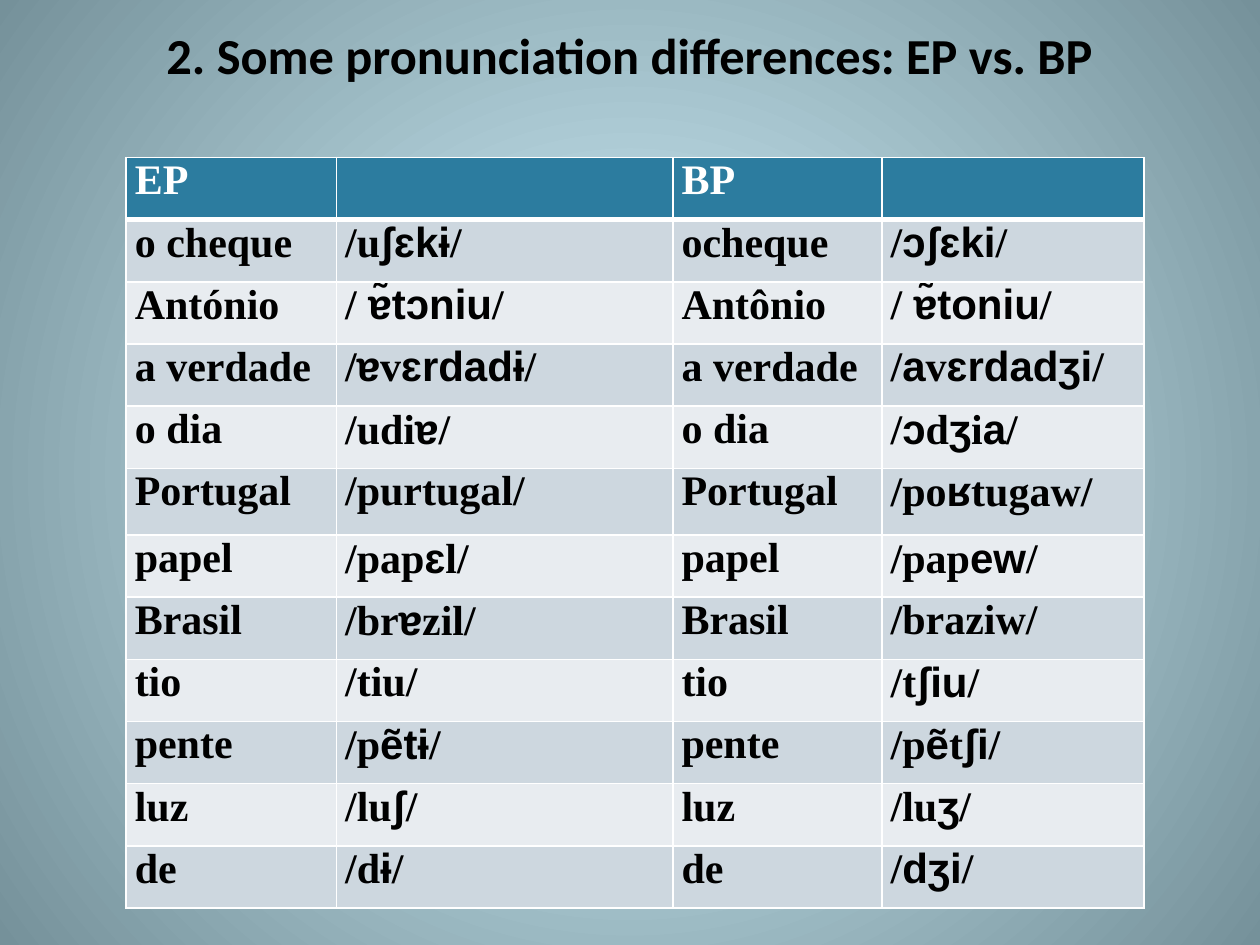
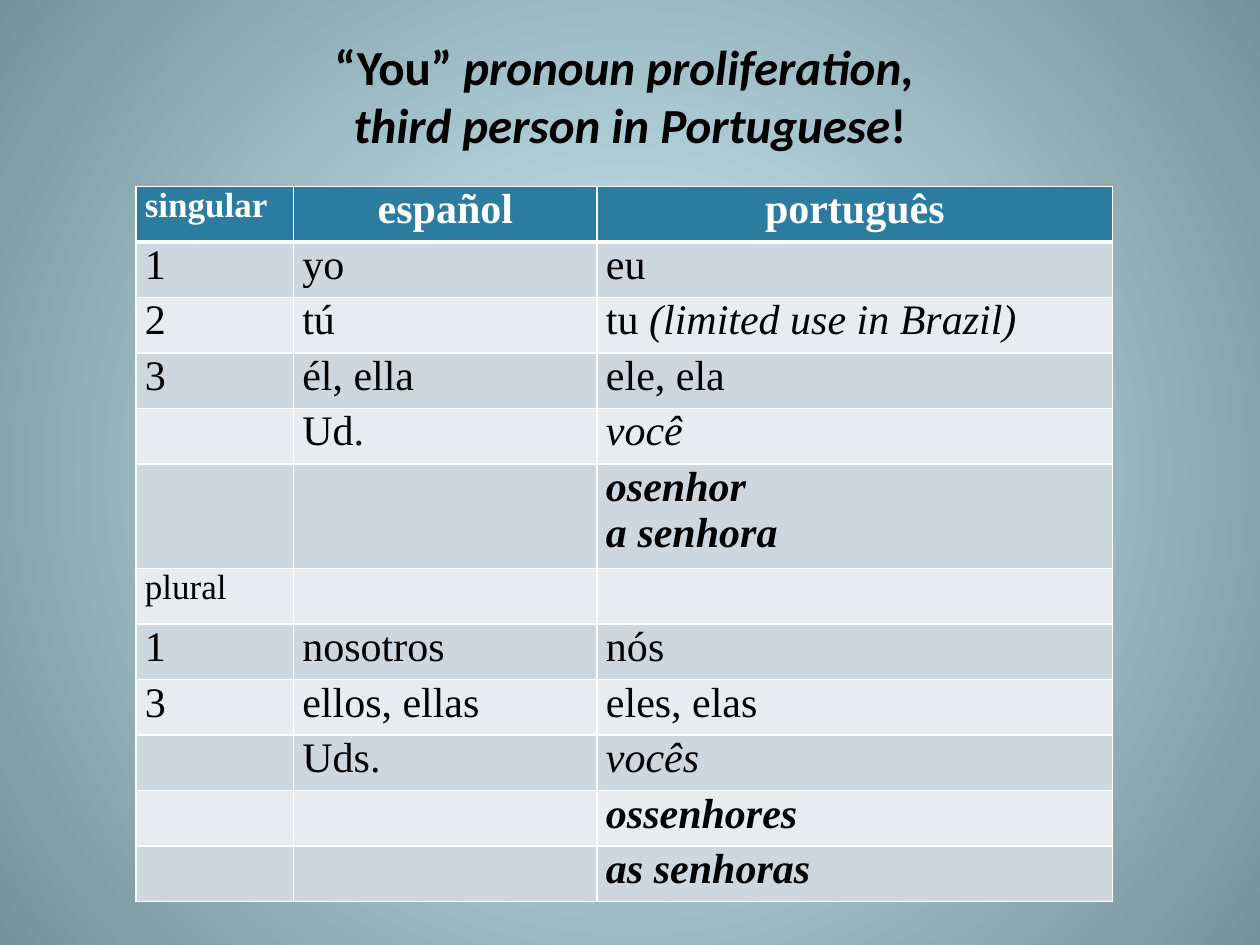
from dataclasses import dataclass, field
from typing import NamedTuple

from lxml import etree
from pptx import Presentation
from pptx.dml.color import RGBColor
from pptx.enum.text import MSO_ANCHOR, PP_ALIGN
from pptx.oxml.ns import qn
from pptx.util import Inches, Pt

CENTER, LEFT = PP_ALIGN.CENTER, PP_ALIGN.LEFT
BOTTOM = MSO_ANCHOR.BOTTOM

BLACK = RGBColor(0x00, 0x00, 0x00)
WHITE = RGBColor(0xFF, 0xFF, 0xFF)
GLOW = RGBColor(0xD5, 0xF5, 0xFF)
EDGE = RGBColor(0x75, 0x91, 0x9A)
HEADER_FILL = RGBColor(0x2C, 0x7C, 0x9F)
DARK_BAND = RGBColor(0xCD, 0xD7, 0xDF)
LIGHT_BAND = RGBColor(0xE8, 0xEC, 0xF0)

TITLE_FONT = "Calibri"
BODY_FONT = "Times New Roman"
PHONETIC_FONT = "Arial"
ACCENT_MARK = "|"
LINE_BREAK = "\v"


class Style(NamedTuple):
    font: str = BODY_FONT
    size: float = 24
    color: RGBColor = BLACK
    bold: bool = False
    italic: bool = False
    align: PP_ALIGN = LEFT


class Accent(NamedTuple):
    font: str | None = None
    italic: bool | None = None


PHONETIC = Accent(font=PHONETIC_FONT)
ITALIC = Accent(italic=True)

WORD = Style(bold=True)
PRONOUN = Style()
FAMILIAR = Style(italic=True)
POLITE = Style(bold=True, italic=True)
NUMBER_LABEL = Style(size=20)
HEADING = Style(color=WHITE, bold=True)
LANGUAGE = HEADING._replace(align=CENTER)


@dataclass
class Title:
    text: str
    height: float
    size: float


@dataclass
class Comparison:
    left: float
    top: float
    height: float
    columns: list[float]
    tall_row: int
    tall_height: float
    rows: list[list[str]]
    body: Style
    accent: Accent
    special: dict[tuple[int, int], Style] = field(default_factory=dict)

    def row_height(self, row: int) -> float:
        if row == self.tall_row:
            return self.tall_height
        return (self.height - self.tall_height) / (len(self.rows) - 1)

    def style(self, row: int, column: int) -> Style:
        return self.special.get((row, column), self.body if row else HEADING)


PRONUNCIATION = Comparison(
    left=1, top=1.25, height=5.96, columns=[1.67, 2.67, 1.66, 2.08],
    tall_row=5, tall_height=0.53, body=WORD, accent=PHONETIC,
    rows=[
        ["EP", "", "BP", ""],
        ["o cheque", "/u|ʃɛkɨ|/", "ocheque", "/|ɔʃɛki|/"],
        ["António", "/| ɐ̃tɔniu|/", "Antônio", "/| ɐ̃toniu|/"],
        ["a verdade", "/|ɐ|v|ɛrdadɨ|/", "a verdade", "/|a|v|ɛrdadʒi|/"],
        ["o dia", "/udi|ɐ|/", "o dia", "/|ɔ|d|ʒ|i|a|/"],
        ["Portugal", "/purtugal/", "Portugal", "/po|ʁ|tugaw/"],
        ["papel", "/pap|ɛ|l/", "papel", "/pap|ew|/"],
        ["Brasil", "/br|ɐ|zil/", "Brasil", "/braziw/"],
        ["tio", "/tiu/", "tio", "/t|ʃiu|/"],
        ["pente", "/p|ẽtɨ|/", "pente", "/p|ẽ|t|ʃi|/"],
        ["luz", "/lu|ʃ|/", "luz", "/lu|ʒ|/"],
        ["de", "/d|ɨ|/", "de", "/|dʒi|/"],
    ],
)

PRONOUNS = Comparison(
    left=1.08, top=1.48, height=5.68, columns=[1.25, 2.41, 4.09],
    tall_row=5, tall_height=0.83, body=PRONOUN, accent=ITALIC,
    rows=[
        ["singular", "español", "português"],
        ["1", "yo", "eu"],
        ["2", "tú", "tu |(limited use in Brazil)"],
        ["3", "él, ella", "ele, ela"],
        ["", "Ud.", "você"],
        ["", "", "osenhor\na senhora"],
        ["plural", "", ""],
        ["1", "nosotros", "nós"],
        ["3", "ellos, ellas", "eles, elas"],
        ["", "Uds.", "vocês"],
        ["", "", "ossenhores"],
        ["", "", "as senhoras"],
    ],
    special={
        (0, 0): HEADING._replace(size=20),
        (0, 1): LANGUAGE,
        (0, 2): LANGUAGE,
        (4, 2): FAMILIAR,
        (5, 2): POLITE,
        (6, 0): NUMBER_LABEL,
        (9, 2): FAMILIAR,
        (10, 2): POLITE,
        (11, 2): POLITE,
    },
)

SLIDES = [
    (Title("2. Some pronunciation differences: EP vs. BP", 0.7, 28.8), PRONUNCIATION),
    (
        Title("“You” |pronoun proliferation, \vthird person in Portuguese|!", 1.25, 28),
        PRONOUNS,
    ),
]


def write_paragraph(paragraph, text: str, style: Style, accent: Accent) -> None:
    paragraph.alignment = style.align
    font = paragraph.font
    font.name, font.size = style.font, Pt(style.size)
    font.bold, font.italic = style.bold, style.italic
    font.color.rgb = style.color
    for position, piece in enumerate(text.split(ACCENT_MARK)):
        for line_number, line in enumerate(piece.split(LINE_BREAK)):
            if line_number:
                paragraph.add_line_break()
            run = paragraph.add_run()
            run.text = line
            if position % 2:
                run.font.name, run.font.italic = accent


def write_text(frame, text: str, style: Style, accent: Accent) -> None:
    for number, line in enumerate(text.split("\n")):
        paragraph = frame.add_paragraph() if number else frame.paragraphs[0]
        write_paragraph(paragraph, line, style, accent)


def paint_background(slide) -> None:
    fill = slide.background.fill
    fill.gradient()
    for stop, color in zip(fill.gradient_stops, (GLOW, EDGE)):
        stop.color.rgb = color
    linear = next(slide.element.iter(qn("a:lin")))
    gradient = linear.getparent()
    radial = etree.Element(qn("a:path"), {"path": "circle"})
    etree.SubElement(
        radial, qn("a:fillToRect"), {side: "50000" for side in "ltrb"}
    )
    gradient.replace(linear, radial)


def add_title(slide, title: Title) -> None:
    box = slide.shapes.add_textbox(
        Inches(0.5), Inches(0.3), Inches(9), Inches(title.height)
    )
    frame = box.text_frame
    frame.word_wrap = True
    frame.vertical_anchor = BOTTOM
    frame.margin_top, frame.margin_bottom = 0, Inches(0.33)
    style = Style(TITLE_FONT, title.size, bold=True, align=CENTER)
    write_text(frame, title.text, style, ITALIC)


def add_borders(cell, row: int) -> None:
    properties = cell._tc.get_or_add_tcPr()
    widths = {"L": 1, "R": 1, "T": 3 if row == 1 else 1, "B": 1 if row else 3}
    for side, width in widths.items():
        line = etree.SubElement(properties, qn(f"a:ln{side}"), {"w": str(Pt(width))})
        solid = etree.SubElement(line, qn("a:solidFill"))
        etree.SubElement(solid, qn("a:srgbClr"), {"val": str(WHITE)})


def add_comparison(slide, comparison: Comparison) -> None:
    table = slide.shapes.add_table(
        len(comparison.rows), len(comparison.columns),
        Inches(comparison.left), Inches(comparison.top),
        Inches(sum(comparison.columns)), Inches(comparison.height),
    ).table
    table.horz_banding = False
    for column, width in zip(table.columns, comparison.columns):
        column.width = Inches(width)
    for row, texts in enumerate(comparison.rows):
        table.rows[row].height = Inches(comparison.row_height(row))
        band = DARK_BAND if row % 2 else LIGHT_BAND
        for column, text in enumerate(texts):
            cell = table.cell(row, column)
            cell.margin_left = cell.margin_right = Inches(0.07)
            cell.margin_top = cell.margin_bottom = 0
            add_borders(cell, row)
            cell.fill.solid()
            cell.fill.fore_color.rgb = band if row else HEADER_FILL
            if text:
                style = comparison.style(row, column)
                write_text(cell.text_frame, text, style, comparison.accent)


def main() -> None:
    presentation = Presentation()
    presentation.slide_width, presentation.slide_height = Inches(10), Inches(7.5)
    blank = presentation.slide_layouts[6]
    for title, comparison in SLIDES:
        slide = presentation.slides.add_slide(blank)
        paint_background(slide)
        add_title(slide, title)
        add_comparison(slide, comparison)
    presentation.save("out.pptx")


if __name__ == "__main__":
    main()
